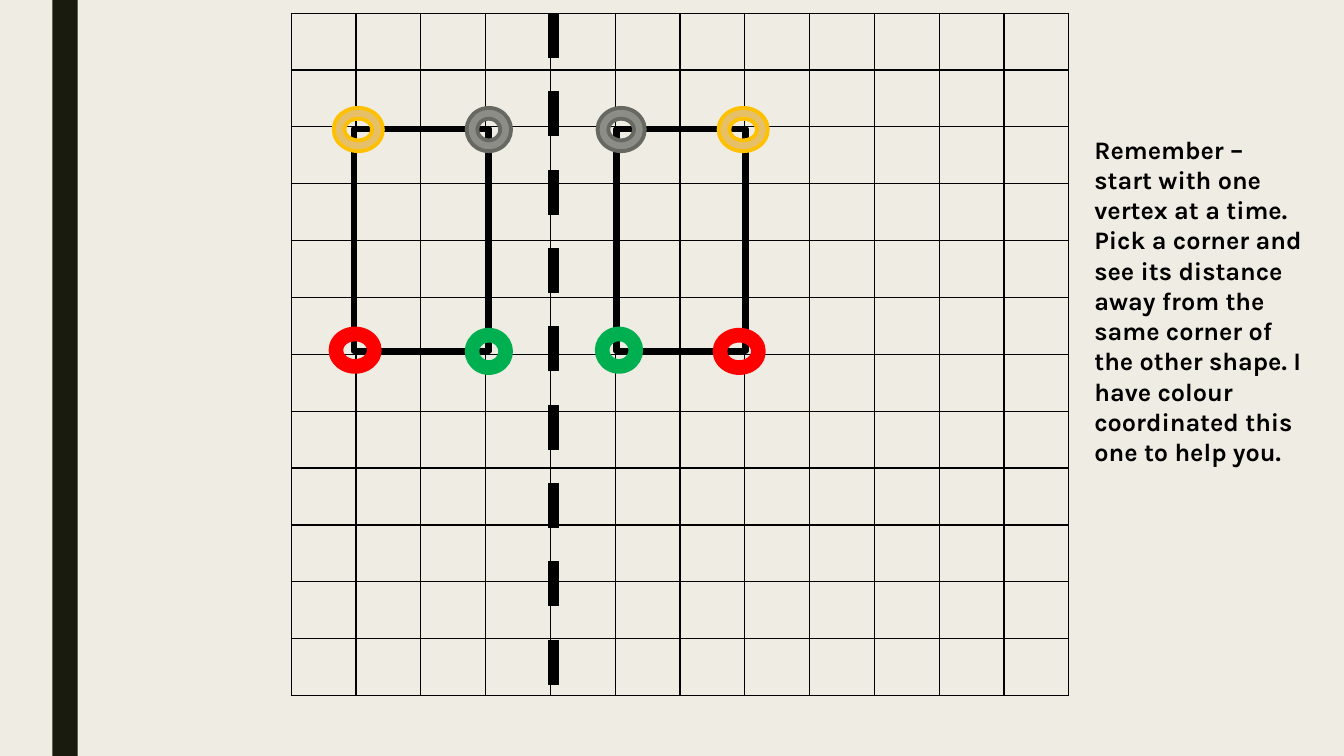
from lxml.etree import SubElement
from pptx import Presentation
from pptx.dml.color import RGBColor
from pptx.enum.dml import MSO_LINE
from pptx.enum.shapes import MSO_CONNECTOR, MSO_SHAPE
from pptx.enum.text import MSO_AUTO_SIZE
from pptx.oxml.ns import qn
from pptx.util import Cm, Pt

# Content: lengths in cm
NOTE = ("Remember – start with one vertex at a time. Pick a corner and see its "
        "distance away from the same corner of the other shape. I have colour "
        "coordinated this one to help you.")
NOTE_BOX = (27.33, 3.25, 5.79, 7.95)
BAR = (1.32, 0, 0.64, 19.05)
GRID = (7.34, 0.33, 19.6, 17.2)
CELLS = 12
MIRROR = 13.94
BOXES = [(8.92, 3.25, 3.4, 5.59), (15.54, 3.25, 3.25, 5.59)]
RING_TALL = 1.09
GREY, GOLD = ("8C8D86", "686863"), ("E6C069", "FFC000")
RED, GREEN = ("FF0000", "FF0000"), ("00B050", "00B050")
RINGS = [  # colours, left, top, width
    (GREY, 11.76, 2.72, 1.12), (GREY, 15.06, 2.72, 1.19),
    (GOLD, 18.11, 2.72, 1.24), (GOLD, 8.41, 2.72, 1.24),
    (RED, 18.01, 8.31, 1.24), (RED, 8.33, 8.28, 1.24),
    (GREEN, 11.76, 8.31, 1.12), (GREEN, 15.04, 8.28, 1.12),
]

deck = Presentation()
deck.slide_width, deck.slide_height = Cm(33.87), Cm(19.05)
slide = deck.slides.add_slide(deck.slide_layouts[6])
shapes = slide.shapes


def paint(target, code):
    target.solid()
    target.fore_color.rgb = RGBColor.from_string(code)


def add_shape(kind, box, fill=None, line=None, width=1):
    shape = shapes.add_shape(kind, *map(Cm, box))
    shape.shadow.inherit = False
    for part, code in ((shape.fill, fill), (shape.line.fill, line)):
        if code:
            paint(part, code)
        else:
            part.background()
    if line:
        shape.line.width = Pt(width)


def add_text(text, box, size=18, font="Karla", color="000000", bold=False):
    label = shapes.add_textbox(*map(Cm, box))
    frame = label.text_frame
    frame.word_wrap = True
    frame.auto_size = MSO_AUTO_SIZE.SHAPE_TO_FIT_TEXT
    run = frame.paragraphs[0].add_run()
    run.text = text
    run.font.size, run.font.name, run.font.bold = Pt(size), font, bold
    paint(run.font.fill, color)


def add_edges(cell, color="000000", width=1):
    props = cell._tc.get_or_add_tcPr()
    for spot, side in enumerate(("lnL", "lnR", "lnT", "lnB")):
        edge = props.makeelement(qn("a:" + side), {"w": str(Pt(width))})
        fill = SubElement(edge, qn("a:solidFill"))
        SubElement(fill, qn("a:srgbClr"), val=color)
        props.insert(spot, edge)


# Background and side bar
paint(slide.background.fill, "EFEDE3")
add_shape(MSO_SHAPE.RECTANGLE, BAR, fill="191B0E")

# Square grid
table = shapes.add_table(CELLS, CELLS, *map(Cm, GRID)).table
table.first_row = table.horz_banding = False
for col in table.columns:
    col.width = Cm(GRID[2] / CELLS)
for row in table.rows:
    row.height = Cm(GRID[3] / CELLS)
for cell in table.iter_cells():
    cell.fill.background()
    add_edges(cell)

# Shape and its reflection
for box in BOXES:
    add_shape(MSO_SHAPE.RECTANGLE, box, line="000000", width=4.5)

# Mirror line
top, tall = GRID[1], GRID[3]
mirror = shapes.add_connector(MSO_CONNECTOR.STRAIGHT, Cm(MIRROR), Cm(top),
                              Cm(MIRROR), Cm(top + tall))
paint(mirror.line.fill, "000000")
mirror.line.width = Pt(8)
mirror.line.dash_style = MSO_LINE.DASH
SubElement(mirror._element.spPr, qn("a:effectLst"))

# Note and vertex rings
add_text(NOTE, NOTE_BOX, bold=True)
for (fill, line), left, top, wide in RINGS:
    add_shape(MSO_SHAPE.DONUT, (left, top, wide, RING_TALL),
              fill=fill, line=line, width=2.75)

deck.save("out.pptx")
